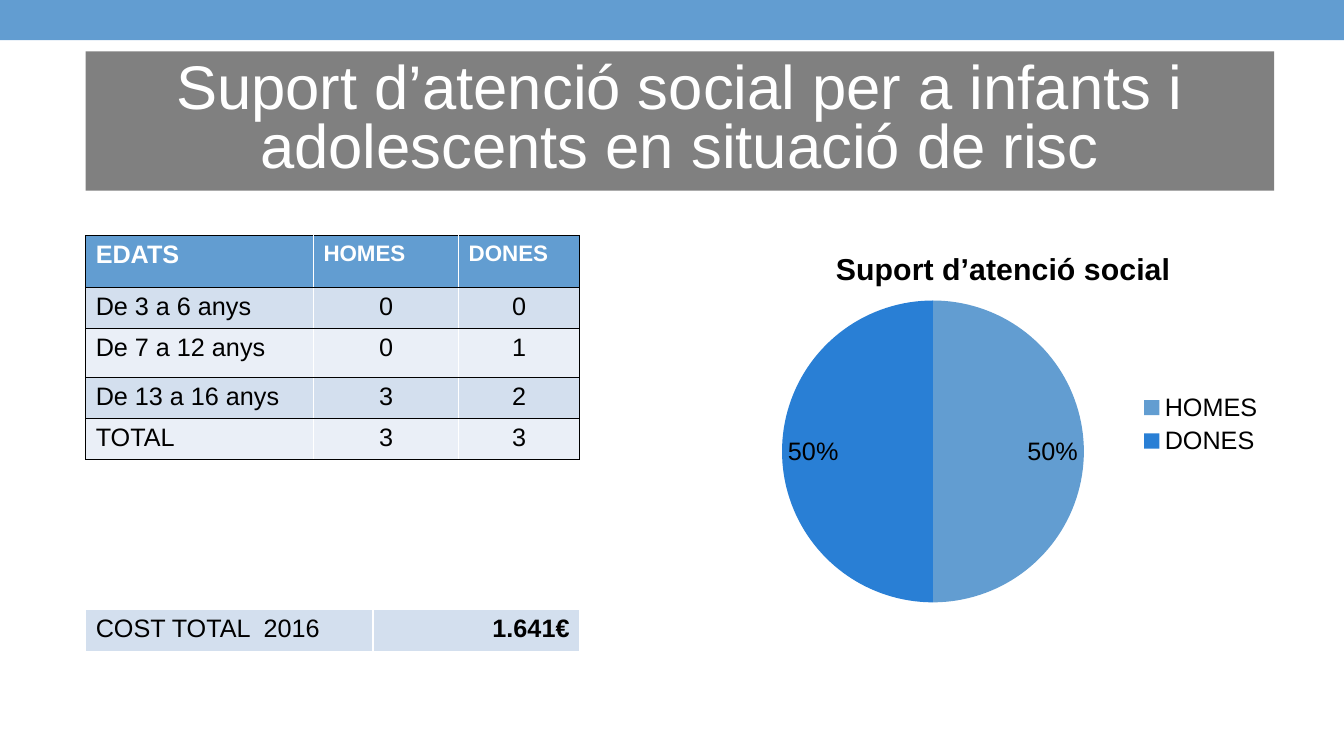
import pptx
import pptx.util
import pptx.dml.color
import pptx.chart.data
import pptx.enum.chart
import pptx.enum.shapes
import pptx.enum.text
import pptx.oxml
import pptx.oxml.ns
from lxml import etree

Pt = pptx.util.Pt
RGB = pptx.dml.color.RGBColor.from_string
ALIGN = pptx.enum.text.PP_ALIGN
CHART = pptx.enum.chart

THEME = {
    "font": "Arial",
    "blue": "629DD1", "deep blue": "297FD5", "grey": "808080",
    "band dark": "D3DFEE", "band light": "EAEFF7",
    "white": "FFFFFF", "black": "000000",
    "title": 44, "chart title": 21.6, "body": 18, "small head": 16,
}


def set_font(font, size, color, bold=False):
    font.name = THEME["font"]
    font.size = Pt(THEME[size])
    font.color.rgb = RGB(THEME[color])
    font.bold = bold


def add_grid(left, top, widths, heights, rows, frame, style):
    """Table with frame-coloured outer and row lines and white column lines."""
    grid = slide.shapes.add_table(len(heights), len(widths), Pt(left), Pt(top),
                                  Pt(sum(widths)), Pt(sum(heights))).table
    grid.first_row = grid.horz_banding = False
    for column, width in zip(grid.columns, widths):
        column.width = Pt(width)
    for r, (height, texts) in enumerate(zip(heights, rows)):
        grid.rows[r].height = Pt(height)
        for c, text in enumerate(texts):
            fill, size, color, bold, align = style(r, c)
            cell = grid.cell(r, c)
            cell.text = text
            paragraph = cell.text_frame.paragraphs[0]
            paragraph.alignment = align
            set_font(paragraph.font, size, color, bold)
            edges = {"lnL": "white" if c else frame,
                     "lnR": "white" if c < len(widths) - 1 else frame,
                     "lnT": frame, "lnB": frame}
            properties = cell._tc.get_or_add_tcPr()
            for edge, line_color in edges.items():
                line = etree.SubElement(properties, pptx.oxml.ns.qn(f"a:{edge}"), w=str(Pt(1)))
                solid = etree.SubElement(line, pptx.oxml.ns.qn("a:solidFill"))
                etree.SubElement(solid, pptx.oxml.ns.qn("a:srgbClr"), val=THEME[line_color])
            cell.fill.solid()
            cell.fill.fore_color.rgb = RGB(THEME[fill])


presentation = pptx.Presentation()
presentation.slide_width, presentation.slide_height = Pt(960), Pt(540)
slide = presentation.slides.add_slide(presentation.slide_layouts[6])

# Top band and title bar
bars = []
for left, top, width, height, color in [(0, 0, 960, 28.8, "blue"),
                                        (61.2, 36.7, 848.9, 99.4, "grey")]:
    bar = slide.shapes.add_shape(pptx.enum.shapes.MSO_SHAPE.RECTANGLE,
                                 Pt(left), Pt(top), Pt(width), Pt(height))
    bar.shadow.inherit = False
    bar.fill.solid()
    bar.fill.fore_color.rgb = RGB(THEME[color])
    bar.line.fill.background()
    bars.append(bar)

heading = bars[1].text_frame
heading.word_wrap = True
heading.vertical_anchor = pptx.enum.text.MSO_ANCHOR.MIDDLE
heading.text = "Suport d’atenció social per a infants i adolescents en situació de risc"
heading.paragraphs[0].alignment = ALIGN.CENTER
heading.paragraphs[0].line_spacing = 0.8
set_font(heading.paragraphs[0].font, "title", "white")


# Ages by sex
def age_style(r, c):
    if r == 0:
        return "blue", "small head" if c else "body", "white", True, ALIGN.LEFT
    return ("band dark" if r % 2 else "band light", "body", "black", False,
            ALIGN.CENTER if c else ALIGN.LEFT)


ages = [
    ("EDATS", "HOMES", "DONES"),
    ("De 3 a 6 anys", "0", "0"),
    ("De 7 a 12 anys", "0", "1"),
    ("De 13 a 16 anys", "3", "2"),
    ("TOTAL", "3", "3"),
]
add_grid(61.2, 168.5, [162.7, 103.7, 86.4], [36.7, 29.3, 35, 29.3, 29.3], ages, "black", age_style)

# Share of each sex
shares = pptx.chart.data.CategoryChartData(number_format="0")
shares.categories = ["HOMES", "DONES"]
shares.add_series("Series 1", [50, 50])
pie = slide.shapes.add_chart(CHART.XL_CHART_TYPE.PIE, Pt(523.4), Pt(164.9),
                             Pt(386.6), Pt(276.5), shares).chart
set_font(pie.font, "body", "black")
pie.has_title = True
pie.chart_title.text_frame.text = "Suport d’atenció social"
set_font(pie.chart_title.text_frame.paragraphs[0].font, "chart title", "black", True)
pie.has_legend = True
pie.legend.position = CHART.XL_LEGEND_POSITION.RIGHT
pie.legend.include_in_layout = False

plot = pie.plots[0]
plot.vary_by_categories = True
for index, color in enumerate(["blue", "deep blue"]):
    slice_format = plot.series[0].points[index].format
    slice_format.fill.solid()
    slice_format.fill.fore_color.rgb = RGB(THEME[color])
    slice_format.line.fill.background()
plot.has_data_labels = True
labels = plot.data_labels
labels.show_percentage = True
labels.show_value = False
labels.number_format, labels.number_format_is_linked = "0%", False
labels.position = CHART.XL_LABEL_POSITION.INSIDE_END
set_font(labels.font, "body", "black")

# Fixed plot area, as fractions of the chart
plot_area = pie._chartSpace.chart.plotArea
for old_layout in plot_area.findall(pptx.oxml.ns.qn("c:layout")):
    plot_area.remove(old_layout)
layout = etree.Element(pptx.oxml.ns.qn("c:layout"))
manual = etree.SubElement(layout, pptx.oxml.ns.qn("c:manualLayout"))
for tag, value in [("layoutTarget", "inner"), ("xMode", "edge"), ("yMode", "edge"),
                   ("x", "0.09"), ("y", "0.18"), ("w", "0.56"), ("h", "0.78")]:
    etree.SubElement(manual, pptx.oxml.ns.qn(f"c:{tag}"), val=value)
plot_area.insert(0, layout)


# Total cost
def cost_style(r, c):
    return "band dark", "body", "black", c == 1, ALIGN.RIGHT if c else ALIGN.LEFT


add_grid(61.2, 435.6, [205.2, 147.6], [29.8], [("COST TOTAL  2016", "1.641€")], "white", cost_style)

presentation.save("out.pptx")
